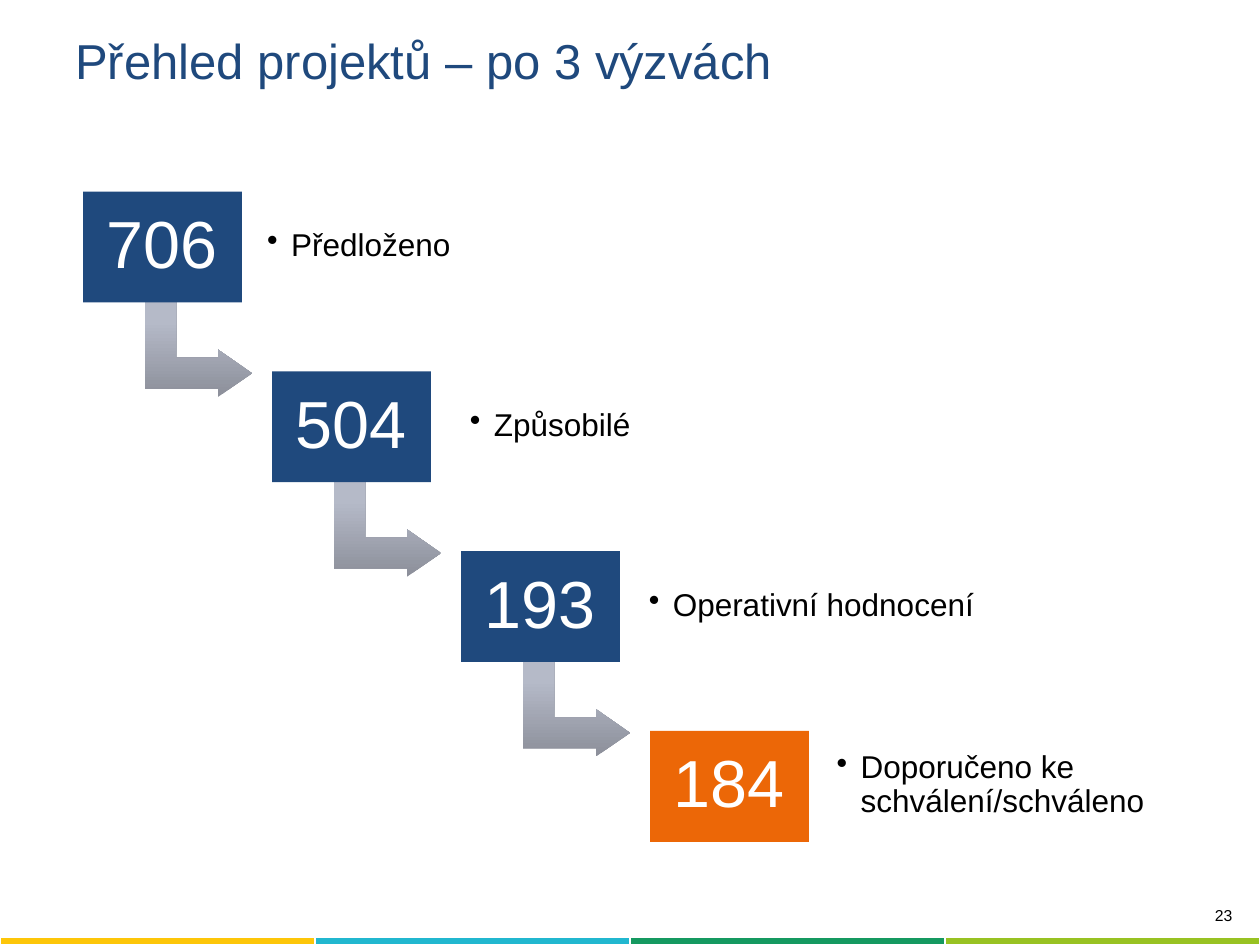
"""Build the project overview slide: a four-step staircase of counts."""
from dataclasses import dataclass

from lxml import etree
from pptx import Presentation, util as u
from pptx.dml.color import RGBColor
from pptx.enum import shapes, text
from pptx.oxml import ns


@dataclass(frozen=True)
class Theme:
    font: str = "Arial"
    blue: str = "1F497D"
    orange: str = "EC6707"
    white: str = "FFFFFF"
    black: str = "000000"
    stripes: tuple = ("FDC609", "21B7CF", "159960", "98C222")
    arrow_stops: tuple = ((0, "8C8F9A"), (80, "B5BAC8"), (100, "B6BBC9"))
    title_size: int = 28
    count_size: int = 38
    label_size: int = 18
    number_size: int = 9


class SlideBuilder:
    COLUMNS, ROWS = 100, 75

    def __init__(self, presentation, theme):
        self.theme = theme
        self.column = presentation.slide_width / self.COLUMNS
        self.row = presentation.slide_height / self.ROWS
        self.slide = presentation.slides.add_slide(presentation.slide_layouts[6])

    def place(self, left, top, width, height):
        return [u.Emu(round(value * unit)) for value, unit in zip(
            (left, top, width, height), (self.column, self.row) * 2)]

    def set_text(self, shape, words, size, color, inset=(0.1, 0.05), bullet=False,
                 anchor=text.MSO_ANCHOR.MIDDLE, **paragraph_format):
        frame = shape.text_frame
        side, end = (u.Inches(value) for value in inset)
        frame_format = {"word_wrap": True, "vertical_anchor": anchor,
                        "margin_left": side, "margin_right": side,
                        "margin_top": end, "margin_bottom": end}
        for name, value in frame_format.items():
            setattr(frame, name, value)
        paragraph = frame.paragraphs[0]
        for name, value in paragraph_format.items():
            setattr(paragraph, name, value)
        if bullet:
            properties = paragraph._p.get_or_add_pPr()
            indent = u.Inches(0.19)
            properties.set("marL", str(indent))
            properties.set("indent", str(-indent))
            etree.SubElement(properties, ns.qn("a:buChar")).set("char", "•")
        run = paragraph.add_run()
        run.text = words
        for name, value in {"name": self.theme.font, "size": u.Pt(size)}.items():
            setattr(run.font, name, value)
        run.font.color.rgb = RGBColor.from_string(color)

    def text_box(self, box, words, size, color, **options):
        shape = self.slide.shapes.add_textbox(*self.place(*box))
        self.set_text(shape, words, size, color, **options)

    def preset(self, kind, box):
        shape = self.slide.shapes.add_shape(kind, *self.place(*box))
        shape.shadow.inherit = False
        shape.line.fill.background()
        return shape

    def count(self, box, words, color):
        shape = self.preset(shapes.MSO_SHAPE.RECTANGLE, box)
        shape.fill.solid()
        shape.fill.fore_color.rgb = RGBColor.from_string(color)
        self.set_text(shape, words, self.theme.count_size, self.theme.white,
                      inset=(0.16, 0.16), alignment=text.PP_ALIGN.CENTER,
                      line_spacing=0.9)

    def arrow(self, box):
        shape = self.preset(shapes.MSO_SHAPE.BENT_UP_ARROW, box)
        shape.rotation = 90
        for index, value in enumerate((0.33, 0.25, 0.36)):
            shape.adjustments[index] = value
        shape.fill.gradient()
        shape.fill.gradient_angle = 90
        gradient = shape._element.spPr.find(ns.qn("a:gradFill"))
        gradient.set("rotWithShape", "0")
        stops = gradient.find(ns.qn("a:gsLst"))
        for stop in list(stops):
            stops.remove(stop)
        for position, color in self.theme.arrow_stops:
            stop = etree.SubElement(stops, ns.qn("a:gs"))
            stop.set("pos", str(position * 1000))
            etree.SubElement(stop, ns.qn("a:srgbClr")).set("val", color)

    def stripe_table(self, box, colors):
        graphic = self.slide.shapes.add_table(1, len(colors), *self.place(*box))
        for cell, color in zip(graphic.table.rows[0].cells, colors):
            for side in ("left", "right", "top", "bottom"):
                setattr(cell, f"margin_{side}", 0)
            cell.fill.solid()
            cell.fill.fore_color.rgb = RGBColor.from_string(color)
            cell.text_frame.paragraphs[0].font.size = u.Pt(1)


def main():
    presentation = Presentation()
    presentation.slide_width = u.Inches(10)
    presentation.slide_height = u.Inches(7.5)
    theme = Theme()
    builder = SlideBuilder(presentation, theme)

    builder.stripe_table((0, 74.4, 100, 0.6), theme.stripes)
    builder.text_box((79.1, 71.4, 19.7, 3.1), "23", theme.number_size, theme.black,
                     anchor=text.MSO_ANCHOR.TOP, alignment=text.PP_ALIGN.RIGHT)
    builder.text_box((5, 1.7, 90, 6.1), "Přehled projektů – po 3 výzvách",
                     theme.title_size, theme.blue)

    steps = [
        ("706", "Předloženo", theme.blue, 20.5, 40.8),
        ("504", "Způsobilé", theme.blue, 36.6, 28.2),
        ("193", "Operativní hodnocení", theme.blue, 50.8, 31.6),
        ("184", "Doporučeno ke schválení/schváleno", theme.orange, 65.7, 27.5),
    ]
    for index, (count, label, color, label_left, label_width) in enumerate(steps):
        left, top = 6.6 + 15 * index, 15.2 + 14.27 * index
        if index < len(steps) - 1:
            builder.arrow((left + 5.4, top + 8.3, 7.5, 8.5))
        builder.count((left, top, 12.6, 8.8), count, color)
        builder.text_box((label_left, top + 0.8, label_width, 7.1), label,
                         theme.label_size, theme.black, inset=(0.07, 0.07),
                         bullet=True, line_spacing=0.9)
    presentation.save("out.pptx")


if __name__ == "__main__":
    main()
